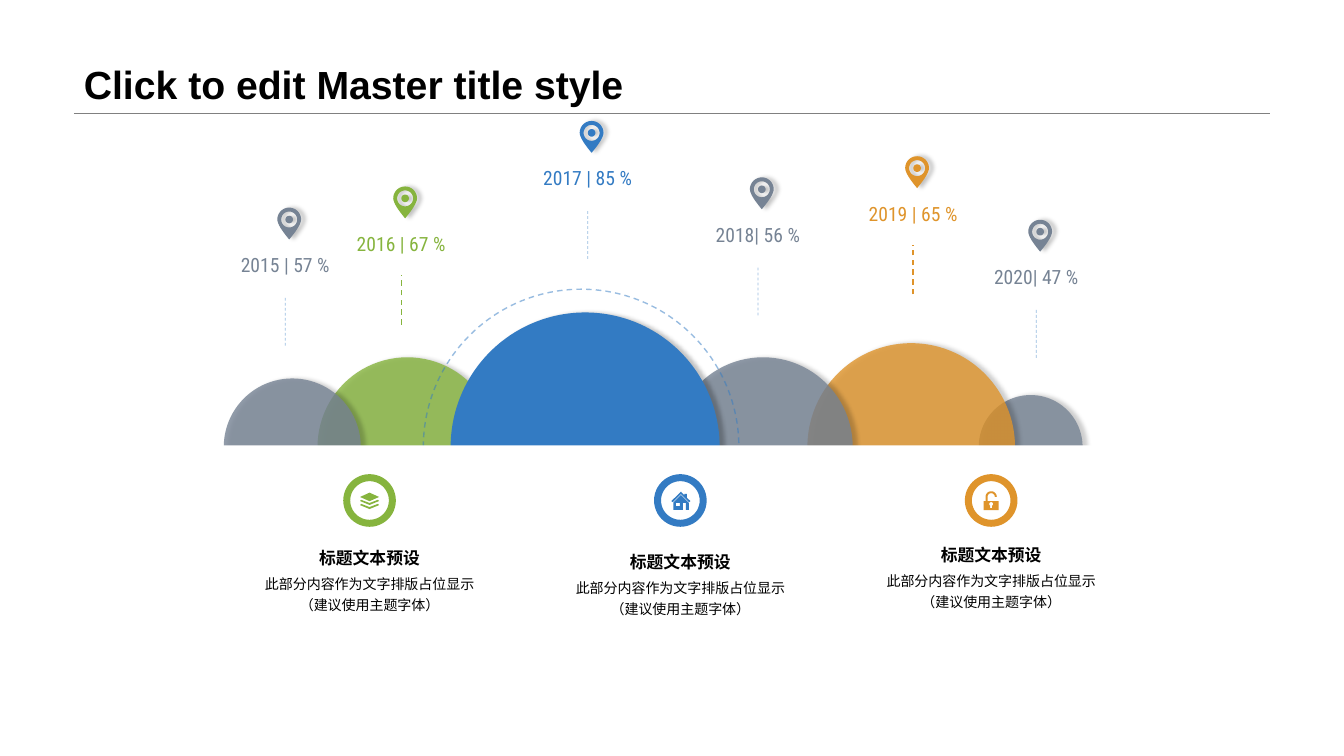
from math import cos, radians, sin

from lxml.etree import SubElement
from pptx import Presentation
from pptx.dml.color import RGBColor
from pptx.enum.dml import MSO_LINE
from pptx.enum.shapes import MSO_CONNECTOR, MSO_SHAPE
from pptx.enum.text import MSO_ANCHOR, PP_ALIGN
from pptx.oxml.ns import qn
from pptx.util import Pt

GRAY, GREEN, BLUE, ORANGE = "768394", "86B43E", "337BC3", "DF942B"
BLACK, WHITE, RULE = "000000", "FFFFFF", "808080"

TITLE = "Click to edit Master title style"
HORIZON = 319.3
BACK_HILLS = [
    (736.2, 74.2, GRAY),
    (650.9, 148.3, ORANGE),
    (545, 128.2, GRAY),
    (290.9, 128.2, GREEN),
    (208.8, 97.9, GRAY),
]
MAIN_HILL = (418, 192.2, BLUE)
HALO = (415.1, 225.4)
MILESTONES = [
    ("2020| 47 %", 740.2, 157, GRAY, BLUE, 0.5, 50),
    ("2019 | 65 %", 652.3, 111.6, ORANGE, ORANGE, 1, 100),
    ("2018| 56 %", 541.4, 126.7, GRAY, BLUE, 0.5, 50),
    ("2017 | 85 %", 419.8, 86.4, BLUE, BLUE, 0.5, 50),
    ("2016 | 67 %", 286.6, 133.2, GREEN, GREEN, 1, 100),
    ("2015 | 57 %", 203.8, 148.3, GRAY, BLUE, 0.5, 50),
]
HEADING = "标题文本预设"
BODY = ["此部分内容作为文字排版占位显示", "（建议使用主题字体）"]


def arc(x, y, radius, start=0, end=360, steps=32):
    angles = [radians(start + (end - start) * i / steps) for i in range(steps + 1)]
    return [(x + radius * cos(a), y + radius * sin(a)) for a in angles]


def curve(a, b, c, d, steps=12):
    result = []
    for i in range(steps + 1):
        t = i / steps
        weights = ((1 - t) ** 3, 3 * t * (1 - t) ** 2, 3 * t * t * (1 - t), t ** 3)
        result.append(tuple(sum(w * p[k] for w, p in zip(weights, (a, b, c, d)))
                            for k in (0, 1)))
    return result


def shifted(points, dy):
    return [(x, y + dy) for x, y in points]


PIN_LEFT = (curve((0, 22.7), (0, 22.7), (-8.5, 13.1), (-8.5, 8.5))
            + curve((-8.5, 8.5), (-8.5, 3.8), (-4.7, 0), (0, 0)))
PIN = [PIN_LEFT + [(-x, y) for x, y in reversed(PIN_LEFT)],
       arc(0, 8.5, 5.7), arc(0, 8.5, 2.7)]

CHEVRON = [(-6.8, 0.4), (-6, -0.5), (0, 1.8), (6, -0.5), (6.8, 0.4), (0, 3.2)]
LAYERS = [[(-6.8, -2.5), (0, -5.6), (6.8, -2.5), (0, 0.5)],
          CHEVRON, shifted(CHEVRON, 2.9)]
HOUSE = [
    [(0.4, -6.3), (2.9, -3.6), (2.9, -4.7), (4.7, -4.7), (4.7, -1.9), (7.2, 0.5),
     (6.1, 1.2), (0.4, -4.6), (-5.4, 1.2), (-6.5, 0.5)],
    [(0.4, -3.9), (6.1, 1.8), (6.1, 6.8), (4, 6.8), (4, 1.8), (1.8, 1.8),
     (1.8, 6.8), (-5, 6.8), (-5, 1.5)],
    [(-3.2, 1.8), (-0.4, 1.8), (-0.4, 4), (-3.2, 4)],
]
LOCK = [
    [(-5.4, 0.4), (-4, 0.4)] + arc(0, -2.6, 4, 180, 360)
    + arc(0, -2.6, 2.6, 360, 180) + [(-2.6, 0.4), (5.4, 0.4), (5.4, 6.8), (-5.4, 6.8)],
    arc(0, 2.5, 1.4, 120, 420) + [(0.7, 5.4), (-0.7, 5.4)],
]
FEATURES = [(486, 390.2, BLUE, HOUSE), (264, 387.4, GREEN, LAYERS),
            (708, 385.2, ORANGE, LOCK)]

deck = Presentation()
deck.slide_width, deck.slide_height = Pt(960), Pt(540)
page = deck.slides.add_slide(deck.slide_layouts[6])


def paint(color_format, color):
    color_format.rgb = RGBColor.from_string(color)


def fade(parent, percent):
    if percent < 100:
        color = next(parent.iter(qn("a:srgbClr")))
        SubElement(color, qn("a:alpha"), val=str(percent * 1000))


def style(shape, fill=None, alpha=100, shadow=False):
    shape.shadow.inherit = False
    shape.line.fill.background()
    if fill:
        shape.fill.solid()
        paint(shape.fill.fore_color, fill)
        fade(shape.fill._xPr, alpha)
    else:
        shape.fill.background()
    if shadow:
        effects = shape._element.spPr.find(qn("a:effectLst"))
        outer = SubElement(effects, qn("a:outerShdw"), blurRad=str(Pt(3)),
                           dist=str(Pt(3)), dir="0", algn="l", rotWithShape="0")
        color = SubElement(outer, qn("a:srgbClr"), val=BLACK)
        SubElement(color, qn("a:alpha"), val="23000")
    return shape


def stroke(shape, color, width, alpha=100, dashed=False):
    shape.line.width = Pt(width)
    shape.line.fill.solid()
    paint(shape.line.color, color)
    fade(shape.line._ln, alpha)
    if dashed:
        shape.line.dash_style = MSO_LINE.DASH


def circle(x, y, size, **look):
    shape = page.shapes.add_shape(MSO_SHAPE.OVAL, Pt(x - size / 2), Pt(y - size / 2),
                                  Pt(size), Pt(size))
    return style(shape, **look)


def line(x1, y1, x2, y2, *look):
    link = page.shapes.add_connector(MSO_CONNECTOR.STRAIGHT,
                                     Pt(x1), Pt(y1), Pt(x2), Pt(y2))
    stroke(link, *look)
    SubElement(link._element.spPr, qn("a:effectLst"))


def outline(x, y, contours, fill, shadow=False):
    rounded = [[(round(px * 100), round(py * 100)) for px, py in c] for c in contours]
    builder = page.shapes.build_freeform(*rounded[0][0], scale=127.0)
    builder.add_line_segments(rounded[0][1:], close=True)
    for contour in rounded[1:]:
        builder.move_to(*contour[0])
        builder.add_line_segments(contour[1:], close=True)
    style(builder.convert_to_shape(Pt(x), Pt(y)), fill, shadow=shadow)


def text(x, y, width, height, lines, size, color=BLACK, font="Arial", bold=False,
         align=PP_ALIGN.CENTER, spacing=None, anchor=MSO_ANCHOR.TOP, wrap=True,
         inset=True):
    box = page.shapes.add_textbox(Pt(x), Pt(y), Pt(width), Pt(height))
    frame = box.text_frame
    frame.word_wrap, frame.vertical_anchor = wrap, anchor
    if not inset:
        frame.margin_left = frame.margin_right = 0
        frame.margin_top = frame.margin_bottom = 0
    para = frame.paragraphs[0]
    para.alignment = align
    if spacing:
        para.line_spacing = spacing
    for index, words in enumerate(lines):
        if index:
            para.add_line_break()
        span = para.add_run()
        span.text = words
        span.font.size, span.font.name, span.font.bold = Pt(size), font, bold
        paint(span.font.color, color)


line(52.8, 80.9, 907.2, 80.9, RULE, 0.25)
text(52.8, 0, 854.4, 80.6, [TITLE], 28, bold=True, align=PP_ALIGN.LEFT,
     spacing=0.9, anchor=MSO_ANCHOR.BOTTOM)

for x, size, color in BACK_HILLS:
    circle(x, HORIZON, size, fill=color, alpha=80, shadow=True)

for label, x, top, color, stem, width, alpha in MILESTONES:
    line(x, top + 98.6, x, top + 63.4, stem, width, alpha, True)
    text(x - 43.2, top + 28.8, 86.4, 24.5, [label], 14, color, "Roboto Condensed")
    outline(x + 2.8, top, PIN, color, True)

stroke(circle(HALO[0], HORIZON, HALO[1]), BLUE, 1, 50, True)
circle(MAIN_HILL[0], HORIZON, MAIN_HILL[1], fill=MAIN_HILL[2], shadow=True)
style(page.shapes.add_shape(MSO_SHAPE.RECTANGLE, 0, Pt(318.2), Pt(960), Pt(221.8)), WHITE)

for x, top, color, icon in FEATURES:
    stroke(circle(x, 357.5, 32.6, fill=WHITE), color, 5)
    outline(x, 357.5, icon, color)
    text(x - 94, top, 188, 25.2, [HEADING], 12, bold=True, wrap=False)
    text(x - 83.2, top + 21.6, 166.4, 46.8, BODY, 10, spacing=1.2, inset=False)

deck.save("out.pptx")
